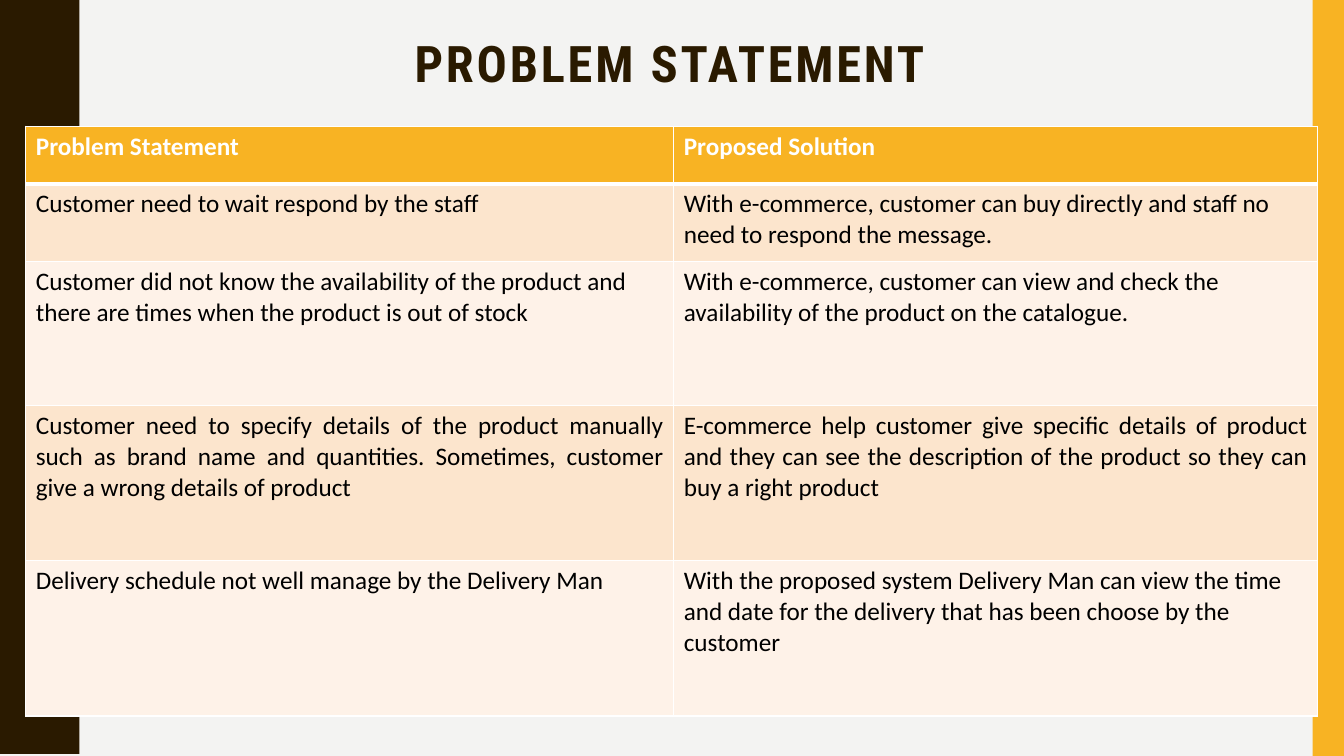
import pptx
import pptx.dml.color
import pptx.enum.shapes
import pptx.enum.text
import pptx.oxml
import pptx.oxml.ns
import pptx.util

Cm, Pt = pptx.util.Cm, pptx.util.Pt
ALIGN = pptx.enum.text.PP_ALIGN

# Content
HEADING = "PROBLEM STATEMENT"
HEADERS = ("Problem Statement", "Proposed Solution")
PROBLEMS = [  # problem, solution, row height in cm, alignment
    ("Customer need to wait respond by the staff",
     "With e-commerce, customer can buy directly and staff no need to respond the message.",
     1.96, ALIGN.LEFT),
    ("Customer did not know the availability of the product and there are times "
     "when the product is out of stock",
     "With e-commerce, customer can view and check the availability of the product "
     "on the catalogue.",
     3.63, ALIGN.LEFT),
    ("Customer need to specify details of the product manually such as brand name "
     "and quantities. Sometimes, customer give a wrong details of product",
     "E-commerce help customer give specific details of product and they can see the "
     "description of the product so they can buy a right product",
     3.91, ALIGN.JUSTIFY),
    ("Delivery schedule not well manage by the Delivery Man",
     "With the proposed system Delivery Man can view the time and date for the "
     "delivery that has been choose by the customer",
     3.91, ALIGN.LEFT),
]
COLORS = {"background": "F3F3F2", "dark": "2A1A00", "accent": "F8B323",
          "band": "FCE5CD", "light": "FEF2E8", "white": "FFFFFF", "black": "000000"}

# Layout in cm
SLIDE_W, SLIDE_H = 33.87, 19.05
HEADER_H = 1.45
COLUMN_WIDTHS = (16.33, 16.23)
STRIPE_W = 0.79
HALF_WAVE = SLIDE_H / 10
WAVE_MIDDLE = 2.22
WAVE_START = [(1.98, 0), (1.98, 0.18), (2.01, 0.36), (2.03, 0.51),
              (2.06, 0.64), (2.11, 0.74), (2.16, 0.84)]


def rgb(name):
    return pptx.dml.color.RGBColor.from_string(COLORS[name])


def write(frame, text, *, font, size, color, bold=False, align=ALIGN.LEFT,
          line_spacing=None, tracking=None):
    paragraph = frame.paragraphs[0]
    paragraph.alignment = align
    paragraph.line_spacing = line_spacing
    run = paragraph.add_run()
    run.text = text
    run.font.name, run.font.size, run.font.bold = font, Pt(size), bold
    run.font.color.rgb = rgb(color)
    if tracking:
        run.font._element.set("spc", str(tracking * 100))


def paint(shape, color):
    shape.shadow.inherit = False
    shape.fill.solid()
    shape.fill.fore_color.rgb = rgb(color)
    shape.line.fill.background()


def add_borders(cell, top, bottom):
    properties = cell._tc.get_or_add_tcPr()
    for index, (side, width) in enumerate(
            (("L", 1), ("R", 1), ("T", top), ("B", bottom))):
        properties.insert(index, pptx.oxml.parse_xml(
            f'<a:ln{side} {pptx.oxml.ns.nsdecls("a")} w="{Pt(width)}"><a:solidFill>'
            f'<a:srgbClr val="{COLORS["white"]}"/></a:solidFill></a:ln{side}>'))


def wave_points():
    half = WAVE_START + [(2 * WAVE_MIDDLE - x, HALF_WAVE - y)
                         for x, y in reversed(WAVE_START)]
    for number in range(10):
        top = number * HALF_WAVE
        if number % 2 == 0:
            yield from ((x, top + y) for x, y in half)
        else:
            yield from ((x, top + HALF_WAVE - y) for x, y in reversed(half))


def add_decoration(slide):
    slide.background.fill.solid()
    slide.background.fill.fore_color.rgb = rgb("background")
    builder = slide.shapes.build_freeform(0, 0, scale=Cm(1))
    builder.add_line_segments([*wave_points(), (0, SLIDE_H)], close=True)
    paint(builder.convert_to_shape(), "dark")
    stripe = slide.shapes.add_shape(
        pptx.enum.shapes.MSO_SHAPE.RECTANGLE,
        Cm(SLIDE_W - STRIPE_W), 0, Cm(STRIPE_W), Cm(SLIDE_H))
    paint(stripe, "accent")


def add_heading(slide):
    title = slide.shapes.title
    title.left, title.top, title.width, title.height = (
        Cm(2.34), Cm(0.76), Cm(29.08), Cm(1.8))
    title.text_frame.word_wrap = True
    title.text_frame.vertical_anchor = pptx.enum.text.MSO_ANCHOR.MIDDLE
    write(title.text_frame, HEADING, font="Roboto Condensed", size=36, color="dark",
          bold=True, align=ALIGN.CENTER, line_spacing=0.9, tracking=2)


def add_problem_table(slide):
    rows = [(*HEADERS, HEADER_H, ALIGN.LEFT), *PROBLEMS]
    table = slide.shapes.add_table(
        len(rows), len(HEADERS), Cm(0.65), Cm(3.18), Cm(sum(COLUMN_WIDTHS)),
        Cm(sum(row[2] for row in rows))).table
    for column, width in zip(table.columns, COLUMN_WIDTHS):
        column.width = Cm(width)
    for r, (problem, solution, height, align) in enumerate(rows):
        table.rows[r].height = Cm(height)
        header = r == 0
        fill = "accent" if header else "band" if r % 2 else "light"
        for c, text in enumerate((problem, solution)):
            cell = table.cell(r, c)
            cell.fill.solid()
            cell.fill.fore_color.rgb = rgb(fill)
            add_borders(cell, top=3 if r == 1 else 1, bottom=3 if header else 1)
            write(cell.text_frame, text, font="Calibri", size=18, bold=header,
                  color="white" if header else "black", align=align)


def main():
    deck = pptx.Presentation()
    deck.slide_width, deck.slide_height = Cm(SLIDE_W), Cm(SLIDE_H)
    slide = deck.slides.add_slide(deck.slide_layouts[5])
    add_decoration(slide)
    add_heading(slide)
    add_problem_table(slide)
    deck.save("out.pptx")


if __name__ == "__main__":
    main()
